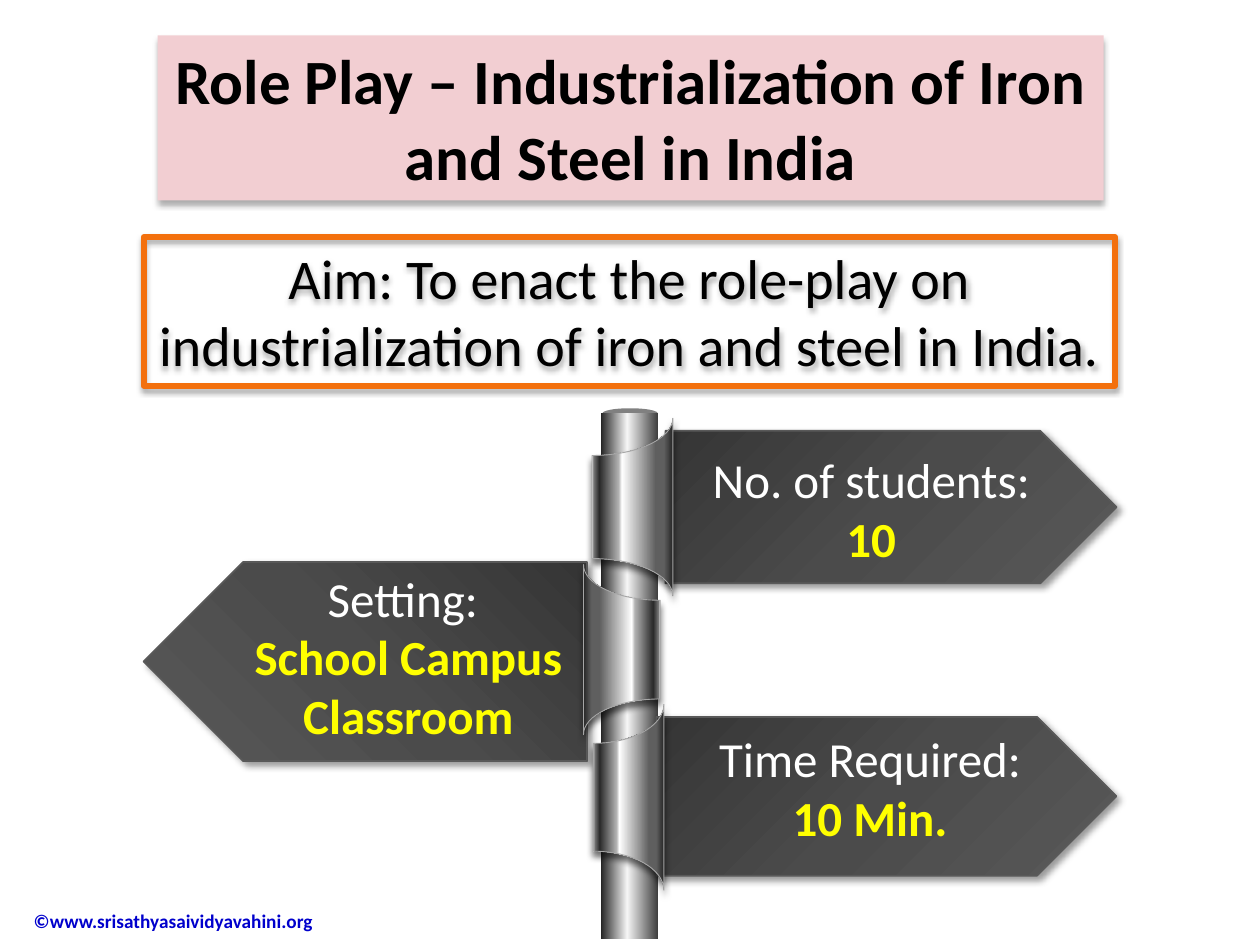
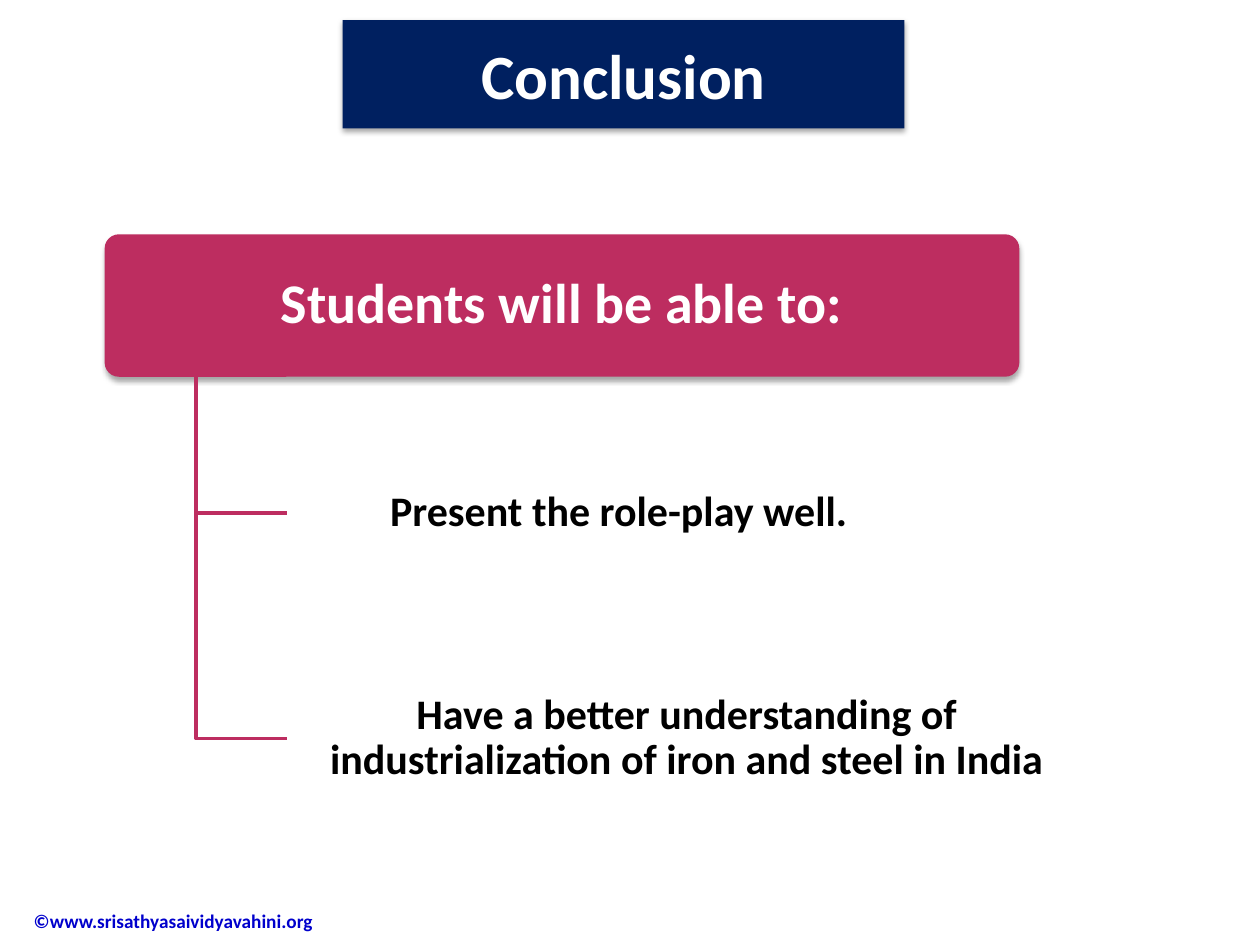
from dataclasses import dataclass
from math import cos, pi, sin

from lxml import etree
from pptx import Presentation
from pptx.dml.color import RGBColor
from pptx.enum.shapes import MSO_SHAPE
from pptx.enum.text import MSO_ANCHOR, PP_ALIGN
from pptx.oxml.ns import qn
from pptx.util import Pt

RECT, ROUNDED = MSO_SHAPE.RECTANGLE, MSO_SHAPE.ROUNDED_RECTANGLE
OVAL, SIGN = MSO_SHAPE.OVAL, MSO_SHAPE.PENTAGON
TOP, MIDDLE = MSO_ANCHOR.TOP, MSO_ANCHOR.MIDDLE
LEFT, CENTER = PP_ALIGN.LEFT, PP_ALIGN.CENTER


@dataclass(frozen=True)
class Theme:
    font: str = "Calibri"
    title: int = 36
    lead: int = 32
    sign: int = 28
    body: int = 24
    footer: int = 11
    black: str = "000000"
    white: str = "FFFFFF"
    yellow: str = "FFFF00"
    link: str = "0000CC"
    navy: str = "002060"
    pink: str = "F2CED2"
    crimson: str = "BD2D60"
    orange: str = "F3700D"
    cap: str = "808080"
    plate_edge: str = "595959"
    sleeve_edge: str = "A6A6A6"
    # gradients: (position %, colour)
    pole: tuple = ((0, "404040"), (54, "F5F5F5"), (100, "262626"))
    plate: tuple = ((0, "353535"), (50, "4B4B4B"), (100, "595959"))
    sleeve: tuple = ((0, "262626"), (11, "5F5F5F"), (21, "5F5F5F"), (63, "FFFFFF"),
                     (67, "B2B2B2"), (91, "292929"), (98, "777777"), (100, "EAEAEA"))
    # shadows: opacity %, blur, distance, angle
    title_shadow: tuple = (32, 3.5, 2.2, 90)
    box_shadow: tuple = (35, 3.1, 1.8, 90)
    plate_shadow: tuple = (40, 4, 3, 45)
    sleeve_shadow: tuple = (56, 4, 3, 90)


class Deck:
    def __init__(self, theme):
        self.theme = theme
        self.prs = Presentation()
        self.prs.slide_width, self.prs.slide_height = Pt(720), Pt(540)

    def new_slide(self):
        self.shapes = self.prs.slides.add_slide(self.prs.slide_layouts[6]).shapes

    def footer(self):
        t = self.theme
        self.text((12.2, 511.2, 181.5, 29.5), [("©www.srisathyasaividyavahini.org", t.link, True)],
                  t.footer, anchor=MIDDLE, align=LEFT)

    def style(self, sp, fill=None, gradient=None, angle=0, line=None, shadow=None):
        """Fill with a colour or gradient stops; line is (colour, width)."""
        if gradient:
            sp.fill.gradient()
            sp.fill.gradient_angle = (360 - angle) % 360
            stops = sp.element.spPr.find(qn("a:gradFill")).find(qn("a:gsLst"))
            for gs in list(stops):
                stops.remove(gs)
            for pos, color in gradient:
                gs = etree.SubElement(stops, qn("a:gs"), pos=str(pos * 1000))
                etree.SubElement(gs, qn("a:srgbClr"), val=color)
        elif fill:
            sp.fill.solid()
            sp.fill.fore_color.rgb = RGBColor.from_string(fill)
        else:
            sp.fill.background()
        if line:
            sp.line.color.rgb = RGBColor.from_string(line[0])
            sp.line.width = Pt(line[1])
        else:
            sp.line.fill.background()
        sp.shadow.inherit = False
        if shadow:
            opacity, blur, dist, direction = shadow
            effects = sp.element.spPr.find(qn("a:effectLst"))
            outer = etree.SubElement(effects, qn("a:outerShdw"), blurRad=str(int(Pt(blur))),
                                     dist=str(int(Pt(dist))), dir=str(direction * 60000),
                                     algn="ctr", rotWithShape="0")
            color = etree.SubElement(outer, qn("a:srgbClr"), val=self.theme.black)
            etree.SubElement(color, qn("a:alpha"), val=str(opacity * 1000))

    def shape(self, kind, box, **style):
        sp = self.shapes.add_shape(kind, *map(Pt, box))
        self.style(sp, **style)
        return sp

    def outline(self, points, close=True, **style):
        points = [(Pt(x), Pt(y)) for x, y in points]
        builder = self.shapes.build_freeform(*points[0], scale=1.0)
        builder.add_line_segments(points[1:], close=close)
        self.style(builder.convert_to_shape(), **style)

    def set_text(self, sp, lines, size, anchor=TOP, align=CENTER, spacing=None, inset=7.2):
        """Fill a shape with paragraphs given as (text, colour, bold)."""
        tf = sp.text_frame
        tf.word_wrap = True
        tf.vertical_anchor = anchor
        tf.margin_left = tf.margin_right = Pt(inset)
        tf.margin_top = tf.margin_bottom = Pt(3.6)
        for i, (text, color, bold) in enumerate(lines):
            p = tf.add_paragraph() if i else tf.paragraphs[0]
            p.text = text
            p.alignment = align
            if spacing:
                p.line_spacing = spacing
            p.font.name, p.font.size, p.font.bold = self.theme.font, Pt(size), bold
            p.font.color.rgb = RGBColor.from_string(color)

    def text(self, box, lines, size, **layout):
        self.set_text(self.shapes.add_textbox(*map(Pt, box)), lines, size, **layout)

    def sleeve(self, back, front, top, height):
        """Wrap a band round the pole, flaring from the back edge to the front edge."""
        flare, steps = 0.21 * height, 16
        curve = [(back + (front - back) * cos(a), flare * sin(a))
                 for a in (pi / 2 * i / steps for i in range(steps + 1))]
        points = [(x, top + height - dy) for x, dy in curve]
        points += [(x, top + dy) for x, dy in reversed(curve)]
        t = self.theme
        self.outline(points, gradient=t.sleeve, angle=180 if front > back else 0,
                     line=(t.sleeve_edge, 0.5), shadow=t.sleeve_shadow)

    def signpost(self, plate, sleeve, text_box, label, value):
        t = self.theme
        back, front = sleeve[:2]
        sp = self.shape(SIGN, plate, gradient=t.plate, angle=45,
                        line=(t.plate_edge, 1), shadow=t.plate_shadow)
        if front < back:
            sp.element.spPr.find(qn("a:xfrm")).set("flipH", "1")
        self.sleeve(*sleeve)
        self.text(text_box, [(label, t.white, False), (value, t.yellow, True)], t.sign)

    def elbow(self, x, top, right, bottom):
        self.outline([(x, top), (x, bottom), (right, bottom)], close=False,
                     line=(self.theme.crimson, 2))


def role_play_slide(deck):
    t = deck.theme
    deck.new_slide()
    deck.footer()
    deck.shape(OVAL, (344.2, 233.3, 31.7, 5.8), fill=t.cap)
    deck.shape(RECT, (343.5, 236.2, 32.4, 300.2), gradient=t.pole, angle=180)

    signs = [
        ((380.2, 246.2, 257.8, 87.1), (338.4, 384.5, 239, 101.5),
         (369.4, 253.4, 257, 74.9), "No. of students:", "10"),
        ((82.1, 321.1, 253.4, 113.8), (377.3, 333.4, 322.6, 97.2),
         (104.4, 321.1, 257.8, 108.7), "Setting: ", "School Campus Classroom"),
        ((375.1, 409.7, 262.8, 90.7), (339.1, 379.4, 402.5, 106.2),
         (388.1, 412.6, 218.2, 74.9), "Time Required:", "10 Min."),
    ]
    for sign in signs:
        deck.signpost(*sign)

    title = deck.shape(RECT, (90, 20.2, 540.7, 94.3), fill=t.pink, shadow=t.title_shadow)
    deck.set_text(title, [("Role Play – Industrialization of Iron and Steel in India",
                           t.black, True)], t.title)
    aim = deck.shape(RECT, (82.1, 135.4, 555.1, 85), line=(t.orange, 3.25), shadow=t.box_shadow)
    deck.set_text(aim, [("Aim: To enact the role-play on industrialization of iron and steel "
                         "in India.", t.black, False)], t.lead)


def conclusion_slide(deck):
    t = deck.theme
    deck.new_slide()
    deck.footer()
    title = deck.shape(RECT, (195.8, 11.5, 321.1, 61.9), fill=t.navy, shadow=t.box_shadow)
    deck.set_text(title, [("Conclusion", t.white, True)], t.title, anchor=MIDDLE)

    left, top, width, height = 59.8, 133.9, 522.7, 81.4
    header = deck.shape(ROUNDED, (left, top, width, height), fill=t.crimson, shadow=t.box_shadow)
    header.adjustments[0] = 0.1
    deck.set_text(header, [("Students will be able to:", t.white, True)], t.lead,
                  anchor=MIDDLE, spacing=0.9)

    card_left, card_height, pitch = 164.2, 103.7, 129
    outcomes = [("Present the role-play well.", 378.7),
                ("Have a better understanding of industrialization of iron and steel in India",
                 456.5)]
    for i, (outcome, card_width) in enumerate(outcomes):
        card_top = 241.2 + i * pitch
        deck.elbow(left + width / 10, top + height, card_left, card_top + card_height / 2)
        card = deck.shape(ROUNDED, (card_left, card_top, card_width, card_height), fill=t.white)
        card.adjustments[0] = 0.1
        deck.set_text(card, [(outcome, t.black, True)], t.body, anchor=MIDDLE,
                      spacing=0.9, inset=3.6)


def main():
    deck = Deck(Theme())
    role_play_slide(deck)
    conclusion_slide(deck)
    deck.prs.save("out.pptx")


if __name__ == "__main__":
    main()
